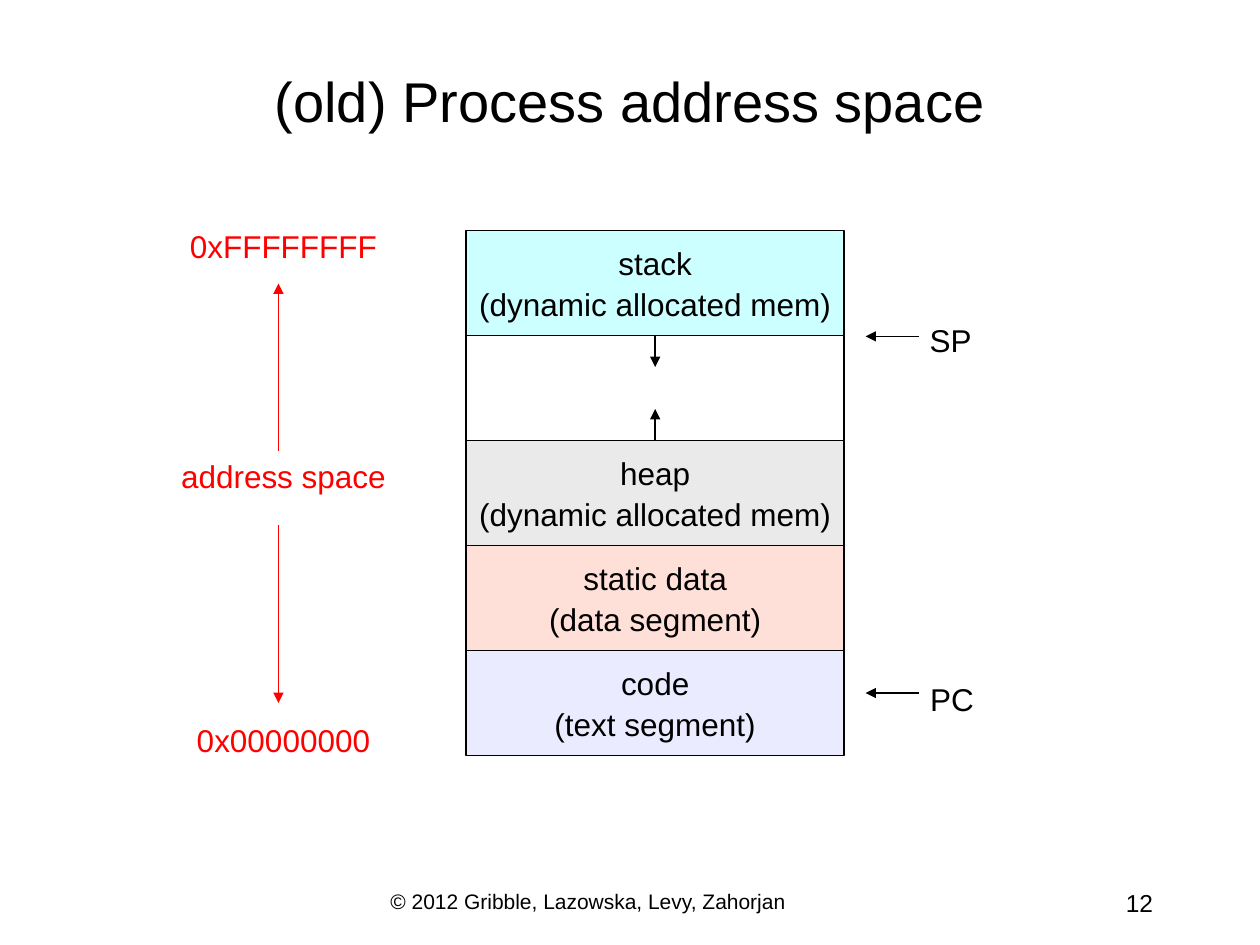
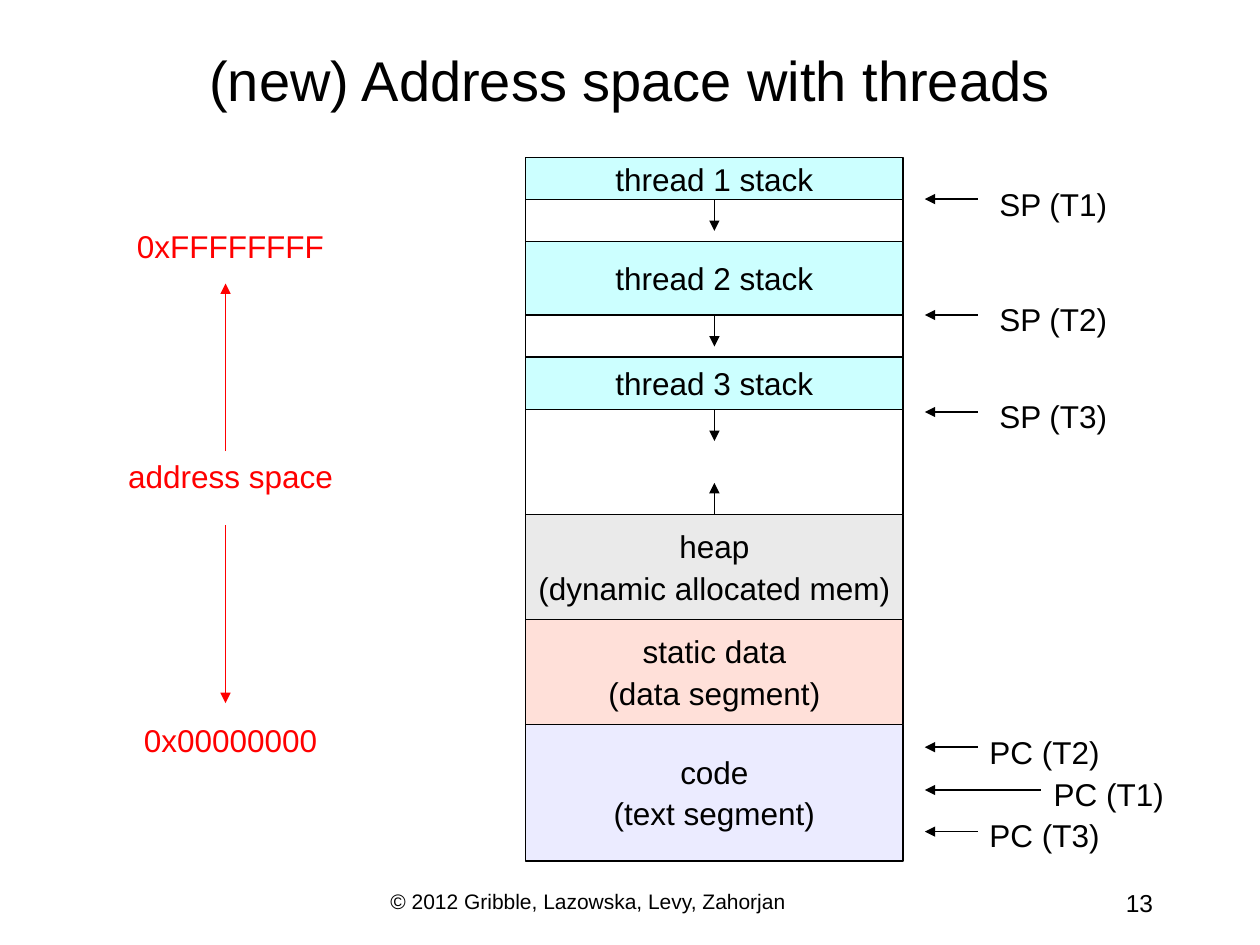
from lxml.etree import SubElement
from pptx import Presentation
from pptx.dml.color import RGBColor
from pptx.enum.shapes import MSO_CONNECTOR, MSO_SHAPE
from pptx.enum.text import MSO_ANCHOR, PP_ALIGN
from pptx.oxml.ns import qn
from pptx.util import Inches, Pt

# Shared look
FONT = "Arial"
BLACK, RED, WHITE = "000000", "FF0000", "FFFFFF"
CYAN, GREY, PINK, LILAC = "CCFFFF", "EAEAEA", "FFE0D9", "EBEBFF"
UNIT = 1 / 12  # block heights are counted in twelfths of an inch
WIDE = 3
FOOT = "© 2012 Gribble, Lazowska, Levy, Zahorjan"
DYN = "(dynamic allocated mem)"
DATA = ("static data", "(data segment)")
CODE = ("code", "(text segment)")

# Blocks: lines, height, fill; pointers: name, arrow y, arrow length, text left, top, width
pages = [
    dict(title="(old) Process address space", spot=(0.75, 0.42, 8.5, 0.75),
         num="12", mid=2.25, left=3.7, top=1.83,
         blocks=[(("stack", DYN), 10, CYAN), ((), 10, WHITE),
                 (("heap", DYN), 10, GREY), (DATA, 10, PINK), (CODE, 10, LILAC)],
         marks=[("SP", 2.67, 0.42, 7.25, 2.5, 0.59),
                ("PC", 5.5, 0.42, 7.26, 5.35, 0.59)]),
    dict(title="(new) Address space with threads", spot=(0.5, 0.25, 9, 0.75),
         num="13", mid=1.83, left=4.17, top=1.25,
         blocks=[(("thread 1 stack",), 4, CYAN), ((), 4, WHITE),
                 (("thread 2 stack",), 7, CYAN), ((), 4, WHITE),
                 (("thread 3 stack",), 5, CYAN), ((), 10, WHITE),
                 (("heap", DYN), 10, GREY), (DATA, 10, PINK), (CODE, 13, LILAC)],
         marks=[("SP (T1)", 1.58, 0.42, 7.81, 1.42, 1.1),
                ("SP (T2)", 2.5, 0.42, 7.81, 2.33, 1.1),
                ("SP (T3)", 3.27, 0.42, 7.81, 3.1, 1.1),
                ("PC (T2)", 5.93, 0.42, 7.74, 5.77, 1.1),
                ("PC (T1)", 6.27, 0.92, 8.25, 6.1, 1.1),
                ("PC (T3)", 6.6, 0.42, 7.74, 6.43, 1.1)]),
]


def write(shape, lines, size=18, ink=BLACK, align=PP_ALIGN.CENTER, wrap=False):
    frame = shape.text_frame
    frame.word_wrap = wrap
    for i, line in enumerate(lines):
        para = frame.add_paragraph() if i else frame.paragraphs[0]
        para.alignment = align
        para.space_before = Pt(2 if i else 0)
        run = para.add_run()
        run.text = line
        run.font.name, run.font.size = FONT, Pt(size)
        run.font.color.rgb = RGBColor.from_string(ink)


def arrow(slide, x1, y1, x2, y2, ink=BLACK):
    link = slide.shapes.add_connector(
        MSO_CONNECTOR.STRAIGHT, Inches(x1), Inches(y1), Inches(x2), Inches(y2))
    link.line.color.rgb = RGBColor.from_string(ink)
    link.line.width = Pt(1)
    props = link._element.spPr
    SubElement(props.find(qn("a:ln")), qn("a:tailEnd"), type="triangle")
    SubElement(props, qn("a:effectLst"))


deck = Presentation()
deck.slide_width, deck.slide_height = Inches(10), Inches(7.5)

for page in pages:
    slide = deck.slides.add_slide(deck.slide_layouts[5])
    shapes = slide.shapes

    # Title
    head = shapes.title
    head.left, head.top, head.width, head.height = map(Inches, page["spot"])
    head.text_frame.vertical_anchor = MSO_ANCHOR.MIDDLE
    write(head, [page["title"]], 32, wrap=True)

    # Footer and page number
    for text, x, wide, size, align in [(FOOT, 3, 4, 12, PP_ALIGN.LEFT),
                                       (page["num"], 7.17, 2.08, 14, PP_ALIGN.RIGHT)]:
        box = shapes.add_textbox(Inches(x), Inches(7), Inches(wide), Inches(0.33))
        write(box, [text], size, align=align, wrap=True)

    # Address range
    mid = page["mid"]
    for text, y in [("0xFFFFFFFF", 1.75), ("address space", 3.58), ("0x00000000", 5.67)]:
        box = shapes.add_textbox(Inches(mid - 0.92), Inches(y), Inches(1.84), Inches(0.4))
        write(box, [text], ink=RED)
    for start, end in [(3.58, 2.25), (4.17, 5.58)]:
        arrow(slide, mid - 0.04, start, mid - 0.04, end, RED)

    # Memory blocks, stacked downwards
    left, y = page["left"], page["top"]
    grow = []
    for lines, units, fill in page["blocks"]:
        high = units * UNIT
        block = shapes.add_shape(
            MSO_SHAPE.RECTANGLE, Inches(left), Inches(y), Inches(WIDE), Inches(high))
        block.shadow.inherit = False
        block.fill.solid()
        block.fill.fore_color.rgb = RGBColor.from_string(fill)
        block.line.color.rgb = RGBColor.from_string(BLACK)
        block.line.width = Pt(1)
        block.text_frame.vertical_anchor = MSO_ANCHOR.MIDDLE
        write(block, lines)
        if fill == CYAN:
            grow.append((y + high, y + high + 0.25))
        elif fill == GREY:
            grow.append((y, y - 0.25))
        y += high

    # Stacks grow down, the heap grows up
    for start, end in grow:
        arrow(slide, left + WIDE / 2, start, left + WIDE / 2, end)

    # Stack pointers and program counters
    tip = left + WIDE + 0.17
    for name, y, reach, x, top, wide in page["marks"]:
        arrow(slide, tip + reach, y, tip, y)
        box = shapes.add_textbox(Inches(x), Inches(top), Inches(wide), Inches(0.4))
        write(box, [name])

deck.save("out.pptx")
